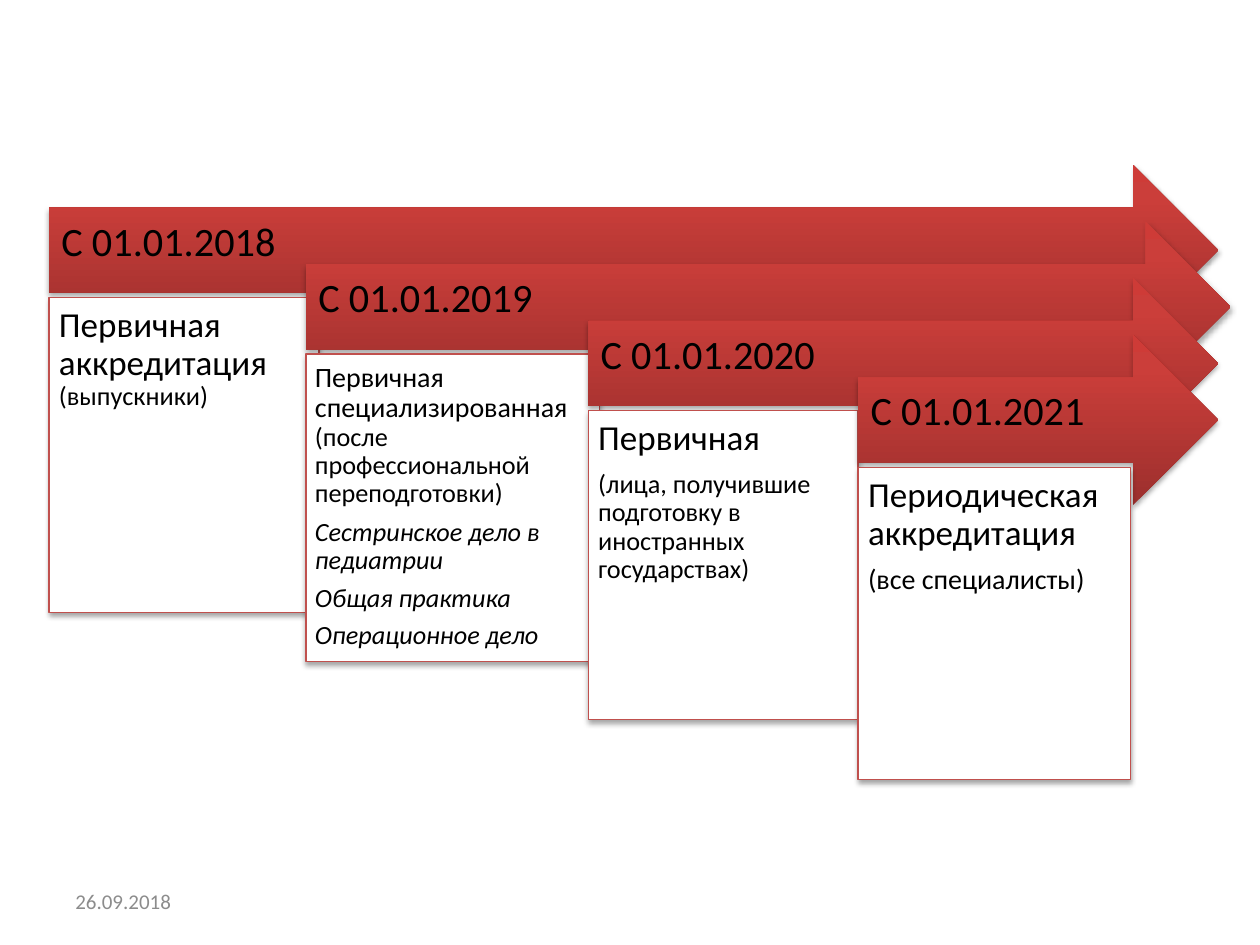
from copy import deepcopy

from lxml.etree import SubElement
from pptx import Presentation
from pptx.dml.color import RGBColor
from pptx.enum.shapes import MSO_SHAPE as SHAPE
from pptx.enum.text import MSO_ANCHOR as ANCHOR, PP_ALIGN as ALIGN
from pptx.oxml.ns import qn
from pptx.util import Cm, Pt

COLORS = {
    "dark_red": "9C2F2D",
    "red": "CB3E3A",
    "light_red": "CE3B37",
    "border": "C0504D",
    "white": "FFFFFF",
    "black": "000000",
    "gray": "8C8C8C",
}
FONT = "Calibri"
FIRST_TOP, STEP = 3.33, 1.14
ARROW_HEIGHT, BOX_OFFSET = 3.43, 2.67

# Each stage: left, arrow width, box width, box height, box inset, date, paragraphs of (text, size, italic)
STAGES = [
    (0.99, 23.57, 5.44, 6.35, 0.2, "С 01.01.2018", [
        [("Первичная аккредитация ", 20, False), ("(выпускники)", 15, False)],
    ]),
    (6.17, 18.64, 5.92, 6.2, 0.18, "С 01.01.2019", [
        [("Первичная специализированная ", 16, False),
         ("(после профессиональной переподготовки)", 15, False)],
        [("Сестринское дело в педиатрии", 15, True)],
        [("Общая практика", 15, True)],
        [("Операционное дело", 15, True)],
    ]),
    (11.86, 12.7, 5.44, 6.22, 0.2, "С 01.01.2020", [
        [("Первичная", 20, False)],
        [("(лица, получившие подготовку в иностранных государствах)", 15, False)],
    ]),
    (17.3, 7.26, 5.49, 6.3, 0.2, "С 01.01.2021", [
        [("Периодическая аккредитация", 20, False)],
        [("(все специалисты)", 16, False)],
    ]),
]


def rgb(name):
    """Return the named colour."""
    return RGBColor.from_string(COLORS[name])


def add_shadow(sp):
    """Give a shape a soft shadow below it."""
    sp.shadow.inherit = False
    effects = sp._element.spPr.find(qn("a:effectLst"))
    shadow = SubElement(effects, qn("a:outerShdw"), blurRad=str(Pt(3.1)),
                        dist=str(Pt(1.8)), dir="5400000", rotWithShape="0")
    color = SubElement(shadow, qn("a:srgbClr"), val=COLORS["black"])
    SubElement(color, qn("a:alpha"), val="35000")


def fill_gradient(sp):
    """Fill a shape with red that darkens towards the bottom."""
    sp.fill.gradient()
    sp.fill.gradient_angle = 90
    stops = sp._element.spPr.find(qn("a:gradFill")).find(qn("a:gsLst"))
    stops.append(deepcopy(stops[-1]))
    levels = [(0, "dark_red"), (0.8, "red"), (1, "light_red")]
    for stop, (position, name) in zip(sp.fill.gradient_stops, levels):
        stop.position = position
        stop.color.rgb = rgb(name)


def write_text(sp, paragraphs, insets, anchor, color="black"):
    """Write paragraphs of (text, size, italic) runs into a shape."""
    tf = sp.text_frame
    tf.word_wrap = True
    tf.vertical_anchor = anchor
    tf.margin_left, tf.margin_top, tf.margin_right, tf.margin_bottom = map(Cm, insets)
    for i, runs in enumerate(paragraphs):
        p = tf.add_paragraph() if i else tf.paragraphs[0]
        p.alignment = ALIGN.LEFT
        p.line_spacing = 0.9
        p.space_after = Pt(0.35 * runs[0][1])
        for text, size, italic in runs:
            r = p.add_run()
            r.text = text
            r.font.name = FONT
            r.font.size = Pt(size)
            r.font.italic = italic
            r.font.color.rgb = rgb(color)


def add_arrow(s, left, top, width, date):
    """Add a gradient arrow with its start date."""
    sp = s.shapes.add_shape(SHAPE.RIGHT_ARROW, Cm(left), Cm(top), Cm(width), Cm(ARROW_HEIGHT))
    fill_gradient(sp)
    sp.line.fill.background()
    add_shadow(sp)
    write_text(sp, [[(date, 23, False)]], (0.25, 0.25, 0.71, 0.53), ANCHOR.MIDDLE)


def add_box(s, left, top, width, height, inset, paragraphs):
    """Add a white bordered box that describes a stage."""
    sp = s.shapes.add_shape(SHAPE.RECTANGLE, Cm(left), Cm(top), Cm(width), Cm(height))
    sp.fill.solid()
    sp.fill.fore_color.rgb = rgb("white")
    sp.line.color.rgb = rgb("border")
    sp.line.width = Pt(0.75)
    add_shadow(sp)
    write_text(sp, paragraphs, [inset] * 4, ANCHOR.TOP)


def add_date(s, text):
    """Add the slide date at the bottom left."""
    sp = s.shapes.add_textbox(Cm(1.27), Cm(17.65), Cm(5.92), Cm(1.02))
    write_text(sp, [[(text, 12, False)]], (0.25, 0.13, 0.25, 0.13), ANCHOR.MIDDLE, "gray")
    p = sp.text_frame.paragraphs[0]
    p.line_spacing = 1.0
    p.space_after = Pt(0)


def main():
    """Build the slide and save it."""
    prs = Presentation()
    prs.slide_width, prs.slide_height = Cm(25.4), Cm(19.05)
    s = prs.slides.add_slide(prs.slide_layouts[6])
    add_date(s, "26.09.2018")
    for i, (left, length, width, height, inset, date, paragraphs) in enumerate(STAGES):
        top = FIRST_TOP + i * STEP
        add_arrow(s, left, top, length, date)
        add_box(s, left, top + BOX_OFFSET, width, height, inset, paragraphs)
    prs.save("out.pptx")


if __name__ == "__main__":
    main()
